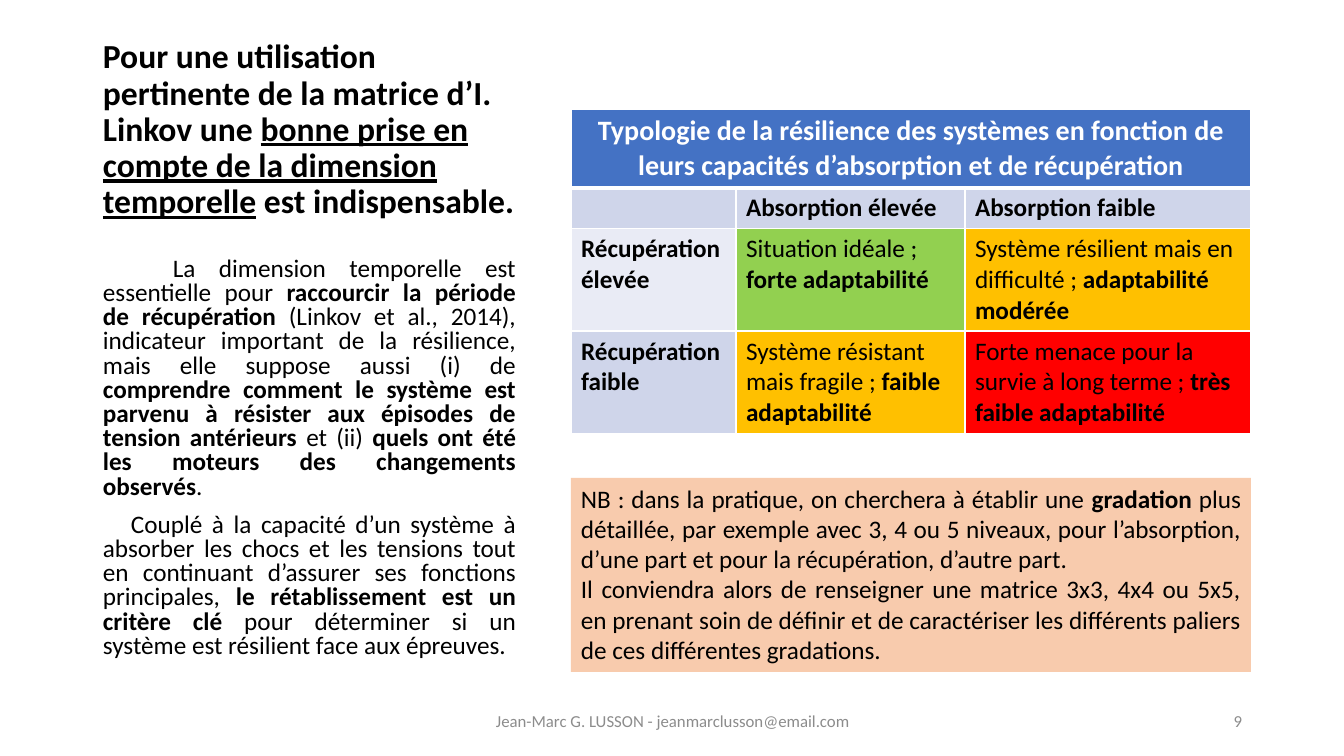
import dataclasses
import typing

import lxml.etree
import pptx
import pptx.dml.color
import pptx.enum.shapes
import pptx.enum.text
import pptx.oxml.ns
import pptx.util

ALIGN = pptx.enum.text.PP_ALIGN
ANCHOR = pptx.enum.text.MSO_ANCHOR
HUES = {
    "black": "000000", "white": "FFFFFF", "grey": "8C8C8C", "blue": "4472C4",
    "band": "CFD5EA", "pale": "E9EBF5", "green": "92D050", "amber": "FFC000",
    "red": "FF0000", "peach": "F8CBAD",
}
COLS = (165, 229, 286)
ROWS = (78, 41, 102, 102)


@dataclasses.dataclass
class Block:
    left: int
    top: int
    width: int
    height: int
    text: str
    style: dict[str, typing.Any]
    anchor: typing.Any = ANCHOR.TOP
    fill: str | None = None


@dataclasses.dataclass
class Cell:
    text: str
    fill: str
    bold: bool = False


BLOCKS = (
    Block(93, 50, 433, 176,
          "Pour une utilisation pertinente de la matrice d’I. Linkov une "
          "*bonne prise en compte de la dimension temporelle* est indispensable.",
          dict(size=24, bold=True, line=0.9), ANCHOR.BOTTOM),
    Block(93, 253, 433, 394,
          "La dimension temporelle est essentielle pour *raccourcir la période de "
          "récupération* (Linkov et al., 2014), indicateur important de la résilience, "
          "mais elle suppose aussi (i) de *comprendre comment le système est parvenu à "
          "résister aux épisodes de tension antérieurs *et (ii) *quels ont été les "
          "moteurs des changements observés*.\n"
          "Couplé à la capacité d’un système à absorber les chocs et les tensions tout "
          "en continuant d’assurer ses fonctions principales, *le rétablissement est un "
          "critère clé* pour déterminer si un système est résilient face aux épreuves.",
          dict(align=ALIGN.JUSTIFY, line=0.8, before=10, indents=(70, 28))),
    Block(446, 701, 454, 40, "Jean-Marc G. LUSSON - jeanmarclusson@email.com",
          dict(size=12, color="grey", align=ALIGN.CENTER), ANCHOR.MIDDLE),
    Block(950, 701, 302, 40, "9",
          dict(size=12, color="grey", align=ALIGN.RIGHT), ANCHOR.MIDDLE),
    Block(571, 478, 680, 194,
          "NB : dans la pratique, on cherchera à établir une *gradation* plus détaillée, "
          "par exemple avec 3, 4 ou 5 niveaux, pour l’absorption, d’une part et pour la "
          "récupération, d’autre part.\n"
          "Il conviendra alors de renseigner une matrice 3x3, 4x4 ou 5x5, en prenant soin "
          "de définir et de caractériser les différents paliers de ces différentes "
          "gradations.",
          dict(align=ALIGN.JUSTIFY), fill="peach"),
)
HEAD = ("Typologie de la résilience des systèmes en fonction de leurs capacités "
        "d’absorption et de récupération")
GRID = (
    (Cell(HEAD, "blue", True), Cell("", "blue"), Cell("", "blue")),
    (Cell("", "band"), Cell("Absorption élevée", "band", True),
     Cell("Absorption faible", "band", True)),
    (Cell("Récupération élevée", "pale", True),
     Cell("Situation idéale ; *forte adaptabilité*", "green"),
     Cell("Système résilient mais en\ndifficulté ; *adaptabilité*\n*modérée*", "amber")),
    (Cell("Récupération faible", "band", True),
     Cell("Système résistant mais fragile ; *faible adaptabilité*", "amber"),
     Cell("Forte menace pour la survie à long terme ; *très faible adaptabilité*", "red")),
)


def px(size: int) -> pptx.util.Emu:
    return pptx.util.Emu(round(size * 914400 / 100.8))


def hue(name: str) -> pptx.dml.color.RGBColor:
    return pptx.dml.color.RGBColor.from_string(HUES[name])


def write(frame: typing.Any, text: str, *, size: int = 18, color: str = "black",
          bold: bool = False, align: typing.Any = ALIGN.LEFT, line: float = 1.0,
          before: int = 0, indents: tuple[int, ...] = ()) -> None:
    for row, words in enumerate(text.split("\n")):
        para = frame.add_paragraph() if row else frame.paragraphs[0]
        para.alignment, para.line_spacing = align, line
        para.space_before = pptx.util.Pt(before)
        para.font.size = pptx.util.Pt(size)
        if indents:
            para._p.get_or_add_pPr().set("indent", str(px(indents[row])))
        for turn, part in enumerate(words.split("*")):
            if not part:
                continue
            run = para.add_run()
            run.text = part
            font = run.font
            font.name, font.size = "Calibri", pptx.util.Pt(size)
            font.color.rgb = hue(color)
            marked = turn % 2 == 1
            font.bold = bold or marked
            font.underline = bold and marked


def place(slide: typing.Any, block: Block) -> None:
    area = [px(n) for n in (block.left, block.top, block.width, block.height)]
    if block.fill:
        shape = slide.shapes.add_shape(pptx.enum.shapes.MSO_SHAPE.RECTANGLE, *area)
        shape.shadow.inherit = False
        shape.fill.solid()
        shape.fill.fore_color.rgb = hue(block.fill)
        shape.line.fill.background()
    else:
        shape = slide.shapes.add_textbox(*area)
    frame = shape.text_frame
    frame.word_wrap = True
    frame.vertical_anchor = block.anchor
    write(frame, block.text, **block.style)


def edge(cell: typing.Any, side: str, width: int) -> None:
    name = pptx.oxml.ns.qn
    rule = lxml.etree.SubElement(cell._tc.get_or_add_tcPr(), name(f"a:ln{side}"),
                                 w=str(pptx.util.Pt(width)))
    fill = lxml.etree.SubElement(rule, name("a:solidFill"))
    lxml.etree.SubElement(fill, name("a:srgbClr"), val=HUES["white"])


def tabulate(slide: typing.Any) -> None:
    table = slide.shapes.add_table(len(ROWS), len(COLS), px(571), px(109),
                                   px(sum(COLS)), px(sum(ROWS))).table
    for col, width in zip(table.columns, COLS):
        col.width = px(width)
    for row, height in zip(table.rows, ROWS):
        row.height = px(height)
    table.cell(0, 0).merge(table.cell(0, len(COLS) - 1))
    for r, line in enumerate(GRID):
        for c, item in enumerate(line):
            cell = table.cell(r, c)
            for side in "LRTB":
                edge(cell, side, 3 if (r, side) in ((0, "B"), (1, "T")) else 1)
            cell.fill.solid()
            cell.fill.fore_color.rgb = hue(item.fill)
            look = dict(size=20, color="white", align=ALIGN.CENTER) if r == 0 else {}
            write(cell.text_frame, item.text, bold=item.bold, **look)


def main() -> None:
    deck = pptx.Presentation()
    deck.slide_width, deck.slide_height = px(1344), px(756)
    slide = deck.slides.add_slide(deck.slide_layouts[6])
    tabulate(slide)
    for block in BLOCKS:
        place(slide, block)
    deck.save("out.pptx")


if __name__ == "__main__":
    main()
